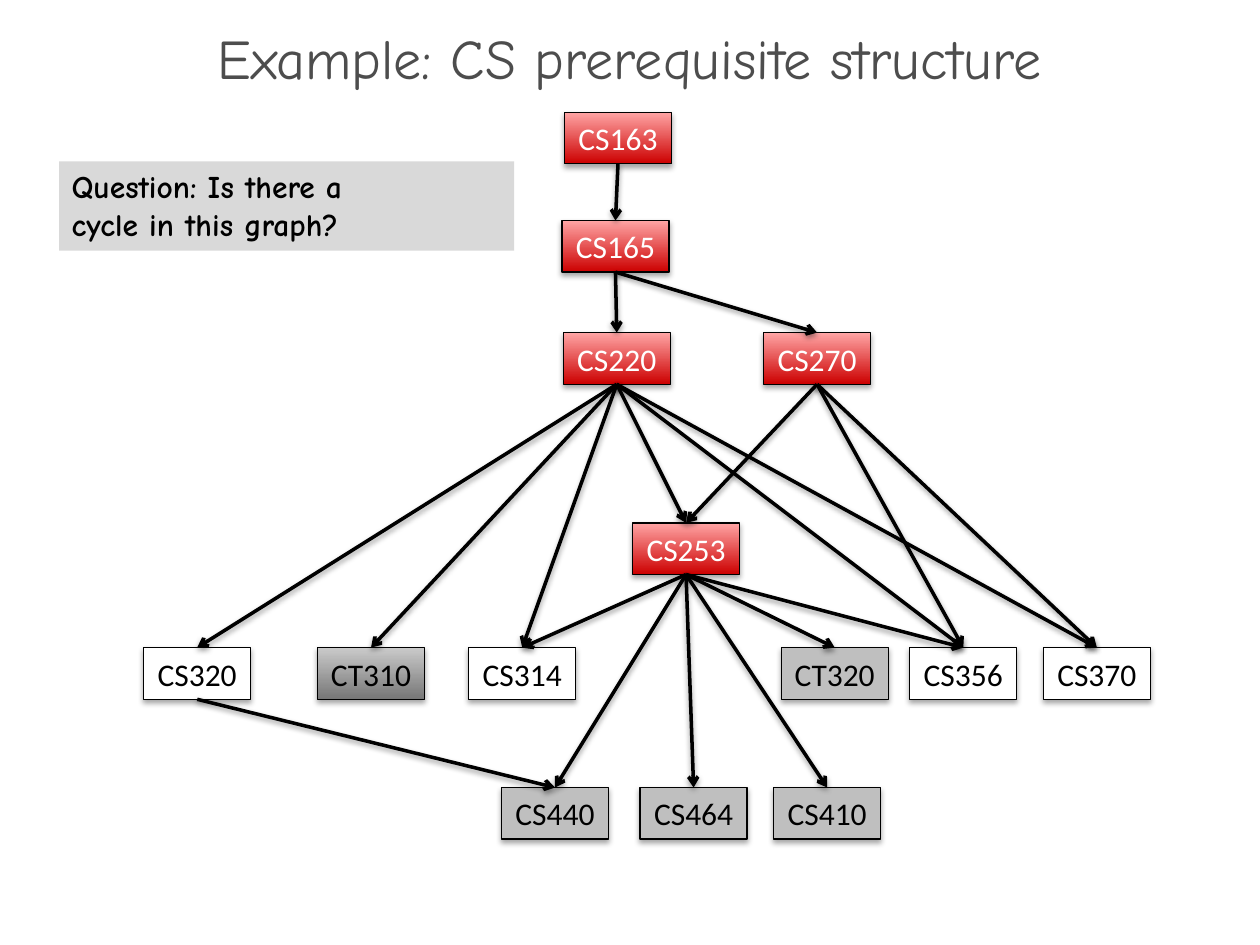
"""Build a slide showing the CS course prerequisites as a directed graph."""
from lxml import etree
from pptx import Presentation
from pptx.dml.color import RGBColor
from pptx.enum import shapes, text
from pptx.oxml import ns
from pptx.util import Inches, Pt

COLORS = {
    "ink": "000000", "paper": "FFFFFF", "title": "4D4D4D",
    "panel": "D9D9D9", "gray": "BFBFBF",
    "red_low": "CC0000", "red_high": "FFA5A5",
    "steel_low": "777777", "steel_high": "CACACA",
}
PALETTE = {name: RGBColor.from_string(value) for name, value in COLORS.items()}
STYLES = {
    "core": (("red_low", "red_high"), "paper"),
    "steel": (("steel_low", "steel_high"), "ink"),
    "elective": (("gray",), "ink"),
    "required": (("paper",), "ink"),
}
BOX_WIDTH, BOX_HEIGHT = 0.85, 0.41
COURSES = {
    "CS163": (4.48, 0.89, "core"),
    "CS165": (4.46, 1.75, "core"),
    "CS220": (4.47, 2.64, "core"),
    "CS270": (6.06, 2.64, "core"),
    "CS253": (5.02, 4.15, "core"),
    "CS320": (1.14, 5.14, "required"),
    "CT310": (2.52, 5.14, "steel"),
    "CS314": (3.72, 5.14, "required"),
    "CT320": (6.2, 5.14, "elective"),
    "CS356": (7.22, 5.14, "required"),
    "CS370": (8.28, 5.14, "required"),
    "CS440": (3.98, 6.25, "elective"),
    "CS464": (5.08, 6.25, "elective"),
    "CS410": (6.14, 6.25, "elective"),
}
LEADS_TO = {
    "CS163": ["CS165"],
    "CS165": ["CS220", "CS270"],
    "CS220": ["CS253", "CT310", "CS314", "CS320", "CS356", "CS370"],
    "CS270": ["CS253", "CS356", "CS370"],
    "CS253": ["CS314", "CT320", "CS410", "CS440", "CS464", "CS356"],
    "CS320": ["CS440"],
}
BOTTOM_SITE, TOP_SITE = 2, 0


def write(holder, lines, frame_format, paragraph_format, font_format, color):
    frame = holder.text_frame
    for key, value in frame_format.items():
        setattr(frame, key, value)
    frame.text = "\n".join(lines)
    for paragraph in frame.paragraphs:
        for key, value in paragraph_format.items():
            setattr(paragraph, key, value)
        font = paragraph.runs[0].font
        for key, value in font_format.items():
            setattr(font, key, value)
        font.color.rgb = PALETTE[color]


def cast_shadow(item, distance, opacity):
    effects = etree.SubElement(item._element.spPr, ns.qn("a:effectLst"))
    shadow = etree.SubElement(
        effects, ns.qn("a:outerShdw"), blurRad=str(Pt(3.15)),
        dist=str(Pt(distance)), dir="5400000", rotWithShape="0")
    ink = etree.SubElement(shadow, ns.qn("a:srgbClr"), val=COLORS["ink"])
    etree.SubElement(ink, ns.qn("a:alpha"), val=str(opacity * 1000))


deck = Presentation()
deck.slide_width, deck.slide_height = Inches(10), Inches(7.5)
slide = deck.slides.add_slide(deck.slide_layouts[6])

boxes = {}
for course, (left, top, style) in COURSES.items():
    box = slide.shapes.add_shape(
        shapes.MSO_SHAPE.RECTANGLE, Inches(left), Inches(top),
        Inches(BOX_WIDTH), Inches(BOX_HEIGHT))
    fills, label_color = STYLES[style]
    if len(fills) == 2:
        box.fill.gradient()
        box.fill.gradient_angle = 90
        for stop, shade, position in zip(box.fill.gradient_stops, fills, (0, 1)):
            stop.color.rgb = PALETTE[shade]
            stop.position = position
    else:
        box.fill.solid()
        box.fill.fore_color.rgb = PALETTE[fills[0]]
    box.line.color.rgb = PALETTE["ink"]
    box.line.width = Pt(0.75)
    cast_shadow(box, 1.8, 35)
    write(box, [course],
          {"word_wrap": False, "vertical_anchor": text.MSO_ANCHOR.MIDDLE},
          {"alignment": text.PP_ALIGN.CENTER},
          {"name": "Calibri", "size": Pt(18)}, label_color)
    boxes[course] = box

for course, followers in LEADS_TO.items():
    for follower in followers:
        arrow = slide.shapes.add_connector(shapes.MSO_CONNECTOR.STRAIGHT, 0, 0, 0, 0)
        arrow.begin_connect(boxes[course], BOTTOM_SITE)
        arrow.end_connect(boxes[follower], TOP_SITE)
        arrow.line.color.rgb = PALETTE["ink"]
        arrow.line.width = Pt(2)
        outline = arrow._element.spPr.find(ns.qn("a:ln"))
        etree.SubElement(outline, ns.qn("a:tailEnd"), type="arrow")
        cast_shadow(arrow, 1.6, 38)

question = slide.shapes.add_shape(
    shapes.MSO_SHAPE.RECTANGLE, Inches(0.47), Inches(1.28), Inches(3.61), Inches(0.71))
question.shadow.inherit = False
question.fill.solid()
question.fill.fore_color.rgb = PALETTE["panel"]
question.line.fill.background()
write(question, ["Question: Is there a", "cycle in this graph?"],
      {"word_wrap": True, "vertical_anchor": text.MSO_ANCHOR.TOP,
       "auto_size": text.MSO_AUTO_SIZE.SHAPE_TO_FIT_TEXT},
      {"alignment": text.PP_ALIGN.LEFT},
      {"name": "Comic Neue", "size": Pt(18), "bold": True}, "ink")

title = slide.shapes.add_textbox(Inches(0), Inches(0.27), Inches(10), Inches(0.5))
write(title, ["Example: CS prerequisite structure"],
      {"word_wrap": True, "vertical_anchor": text.MSO_ANCHOR.MIDDLE},
      {"alignment": text.PP_ALIGN.CENTER, "line_spacing": 0.7},
      {"name": "Comic Neue", "size": Pt(32)}, "title")

deck.save("out.pptx")
